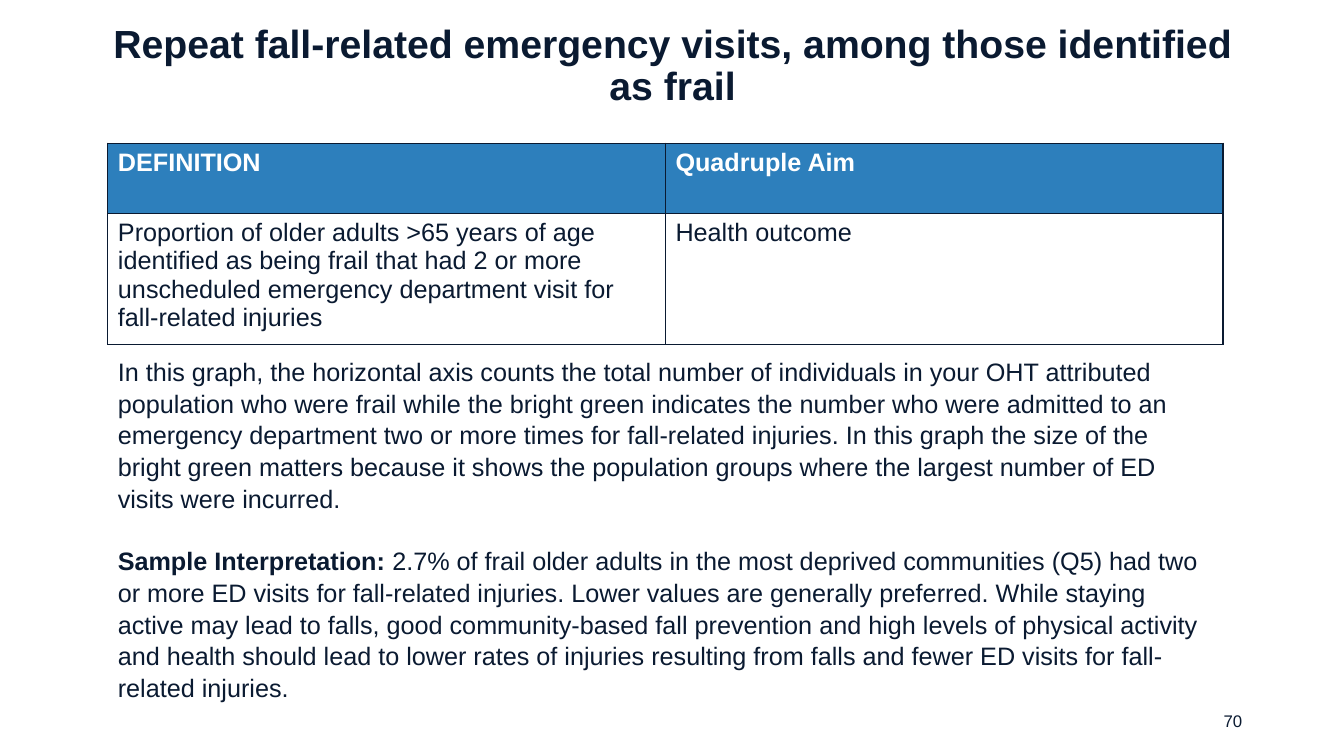
from lxml.etree import SubElement
from pptx import Presentation
from pptx.dml.color import RGBColor
from pptx.enum.text import MSO_ANCHOR as Anchor, MSO_AUTO_SIZE as AutoSize, PP_ALIGN as Align
from pptx.oxml.ns import qn
from pptx.util import Inches, Pt

NAVY, BLUE, WHITE = "0A1A31", "2D7FBC", "FFFFFF"

TABLE_ROWS = [
    ["DEFINITION", "Quadruple Aim"],
    ["Proportion of older adults >65 years of age identified as being frail that had "
     "2 or more unscheduled emergency department visit for fall-related injuries",
     "Health outcome"],
]
EXPLANATION = [
    [("In this graph, the horizontal axis counts the total number of individuals in your OHT "
      "attributed population who were frail while the bright green indicates the number who were "
      "admitted to an emergency department two or more times for fall-related injuries. "
      "In this graph the size of the bright green matters because it shows the population groups "
      "where the largest number of ED visits were incurred.", False)],
    [("Sample Interpretation: ", True),
     ("2.7% of frail older adults in the most deprived communities (Q5) had two or more ED visits "
      "for fall-related injuries. Lower values are generally preferred. While staying active may "
      "lead to falls, good community-based fall prevention and high levels of physical activity "
      "and health should lead to lower rates of injuries resulting from falls and fewer ED visits "
      "for fall-related injuries.", False)],
]


def color(value):
    """Return the RGB colour of a hex string."""
    return RGBColor.from_string(value)


def style(paragraph, size, value=NAVY, bold=None, align=Align.LEFT):
    """Format the font and alignment of a paragraph."""
    paragraph.alignment = align
    font = paragraph.font
    font.name, font.size, font.bold = "Arial", Pt(size), bold
    font.color.rgb = color(value)


def add_title(slide, text, left, top, width, height):
    """Place and fill the title placeholder."""
    title = slide.shapes.title
    title.left, title.top = Inches(left), Inches(top)
    title.width, title.height = Inches(width), Inches(height)
    frame = title.text_frame
    frame.text = text
    frame.auto_size = AutoSize.NONE
    frame.vertical_anchor = Anchor.MIDDLE
    paragraph = frame.paragraphs[0]
    paragraph.line_spacing = 0.9
    style(paragraph, 28, bold=True, align=Align.CENTER)


def add_text(slide, left, top, width, height, anchor=Anchor.TOP):
    """Add a wrapping text box and return its text frame."""
    box = slide.shapes.add_textbox(Inches(left), Inches(top), Inches(width), Inches(height))
    frame = box.text_frame
    frame.word_wrap = True
    frame.vertical_anchor = anchor
    return frame


def add_explanation(slide, paragraphs):
    """Add the paragraphs that explain the graph."""
    frame = add_text(slide, 1.07, 3.47, 11.06, 3.43)
    for index, runs in enumerate(paragraphs):
        paragraph = frame.add_paragraph() if index else frame.paragraphs[0]
        paragraph.line_spacing = 1.05
        if index:
            paragraph.space_before = Pt(21.7)
        style(paragraph, 18)
        for text, bold in runs:
            run = paragraph.add_run()
            run.text, run.font.bold = text, bold


def set_borders(cell, value):
    """Draw a one-point line on every side of a cell."""
    properties = cell._tc.get_or_add_tcPr()
    for index, side in enumerate(("lnL", "lnR", "lnT", "lnB")):
        line = properties.makeelement(qn(f"a:{side}"), {"w": str(Pt(1))})
        fill = SubElement(line, qn("a:solidFill"))
        SubElement(fill, qn("a:srgbClr"), val=value)
        properties.insert(index, line)


def add_definition_table(slide, rows):
    """Add the table with its blue header row."""
    heights = [0.7, 1.3]
    frame = slide.shapes.add_table(len(rows), len(rows[0]), Inches(1.07), Inches(1.42),
                                   Inches(11.06), Inches(sum(heights)))
    table = frame.table
    for row_index, texts in enumerate(rows):
        header = row_index == 0
        table.rows[row_index].height = Inches(heights[row_index])
        for column_index, text in enumerate(texts):
            cell = table.cell(row_index, column_index)
            cell.text = text
            cell.fill.solid()
            cell.fill.fore_color.rgb = color(BLUE if header else WHITE)
            style(cell.text_frame.paragraphs[0], 18, WHITE if header else NAVY, header)
            set_borders(cell, NAVY)


def add_slide_number(slide, number):
    """Add the page number at the lower right."""
    frame = add_text(slide, 9.42, 6.95, 3, 0.4, Anchor.MIDDLE)
    frame.text = number
    style(frame.paragraphs[0], 12, align=Align.RIGHT)


def main():
    """Build and save the slide."""
    presentation = Presentation()
    presentation.slide_width, presentation.slide_height = Inches(13.33), Inches(7.5)
    slide = presentation.slides.add_slide(presentation.slide_layouts[5])
    add_title(slide, "Repeat fall-related emergency visits, among those identified as frail",
              0.77, 0.24, 11.8, 0.84)
    add_definition_table(slide, TABLE_ROWS)
    add_explanation(slide, EXPLANATION)
    add_slide_number(slide, "70")
    presentation.save("out.pptx")


if __name__ == "__main__":
    main()
